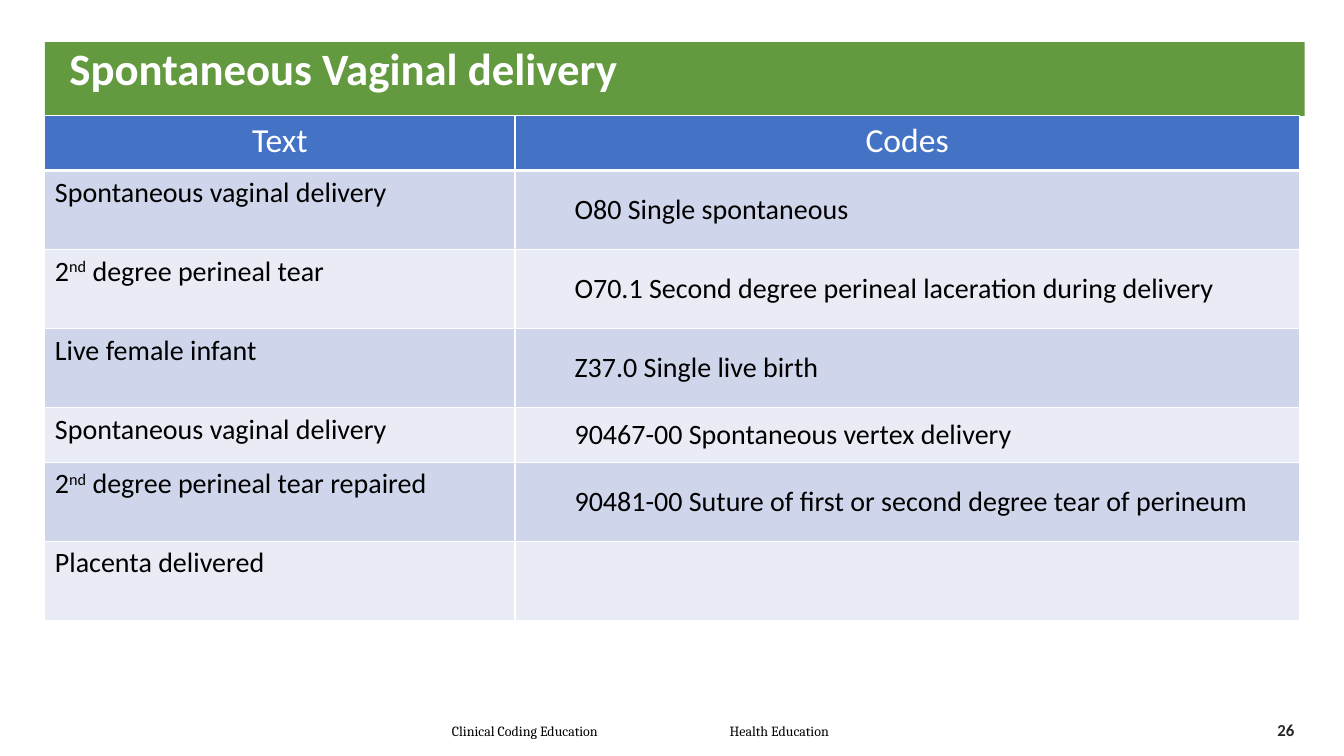
from lxml.etree import SubElement
from pptx import Presentation
from pptx.dml.color import RGBColor
from pptx.enum.shapes import MSO_SHAPE
from pptx.enum.text import MSO_ANCHOR, PP_ALIGN
from pptx.oxml.ns import qn
from pptx.util import Cm, Pt


def rgb(value):
    return RGBColor.from_string(value)


class SlideBuilder:
    """Holds the style and the current slide, and adds each kind of element."""

    font = "Calibri"
    white, black, gray = "FFFFFF", "000000", "262626"
    green, blue = "63993F", "4472C4"
    bands = ("CFD5EA", "E9EBF5")

    def __init__(self, prs):
        self.s = prs.slides.add_slide(prs.slide_layouts[6])

    def style(self, r, size, color, bold=False, font=None):
        r.font.name = font or self.font
        r.font.size = Pt(size)
        r.font.bold = bold
        r.font.color.rgb = rgb(color)

    def banner(self, text, x, y, w, h):
        sp = self.s.shapes.add_shape(MSO_SHAPE.RECTANGLE, Cm(x), Cm(y), Cm(w), Cm(h))
        sp.shadow.inherit = False
        sp.fill.solid()
        sp.fill.fore_color.rgb = rgb(self.green)
        sp.line.fill.background()
        tf = sp.text_frame
        tf.text = text
        tf.margin_left = Cm(0.62)
        tf.vertical_anchor = MSO_ANCHOR.TOP
        p = tf.paragraphs[0]
        p.alignment = PP_ALIGN.LEFT
        p.line_spacing = 0.9
        self.style(p.runs[0], 32, self.white, bold=True)

    def label(self, text, x, y, w, h, size, color, bold=False, font=None,
              align=PP_ALIGN.LEFT, inset=0.25, tab=None):
        tf = self.s.shapes.add_textbox(Cm(x), Cm(y), Cm(w), Cm(h)).text_frame
        tf.word_wrap = True
        tf.vertical_anchor = MSO_ANCHOR.MIDDLE
        tf.margin_left = Cm(inset)
        tf.text = text
        p = tf.paragraphs[0]
        p.alignment = align
        if tab:
            tabs = SubElement(p._p.get_or_add_pPr(), qn("a:tabLst"))
            SubElement(tabs, qn("a:tab"), pos=str(Cm(tab)), algn="l")
        self.style(p.runs[0], size, color, bold, font)

    def borders(self, cell, bottom):
        tcPr = cell._tc.get_or_add_tcPr()
        for side, width in (("L", 1), ("R", 1), ("T", 1), ("B", bottom)):
            ln = SubElement(tcPr, qn(f"a:ln{side}"), w=str(Pt(width)))
            fill = SubElement(ln, qn("a:solidFill"))
            SubElement(fill, qn("a:srgbClr"), val=self.white)

    def cell(self, cell, text, fill, size, color, bottom=1):
        self.borders(cell, bottom)
        cell.fill.solid()
        cell.fill.fore_color.rgb = rgb(fill)
        p = cell.text_frame.paragraphs[0]
        for i, part in enumerate(text.split("^")):
            if part:
                r = p.add_run()
                r.text = part
                self.style(r, size, color)
                if i % 2:
                    r.font._element.set("baseline", "30000")
        return p

    def table(self, header, rows, x, y, widths, heights):
        frame = self.s.shapes.add_table(len(rows) + 1, len(widths), Cm(x), Cm(y),
                                        Cm(sum(widths)), Cm(sum(heights)))
        table = frame.table
        for col, width in zip(table.columns, widths):
            col.width = Cm(width)
        for row, height in zip(table.rows, heights):
            row.height = Cm(height)
        for j, text in enumerate(header):
            p = self.cell(table.cell(0, j), text, self.blue, 24, self.white, bottom=3)
            p.alignment = PP_ALIGN.CENTER
        for i, row in enumerate(rows):
            for j, text in enumerate(row):
                self.cell(table.cell(i + 1, j), text, self.bands[i % 2], 20, self.black)
            code = table.cell(i + 1, 1)
            code.margin_left = Cm(1.5)
            code.vertical_anchor = MSO_ANCHOR.MIDDLE


def main():
    prs = Presentation()
    prs.slide_width, prs.slide_height = Cm(33.87), Cm(19.05)
    b = SlideBuilder(prs)
    b.label("Clinical Coding Education\tHealth Education", 10.54, 18.01, 12.07, 0.84,
            10, b.black, font="Cambria", inset=0.85, tab=7)
    b.banner("Spontaneous Vaginal delivery", 1.13, 1.06, 31.75, 1.86)
    b.label("26", 29.21, 17.98, 3.66, 0.84, 12, b.gray, bold=True, align=PP_ALIGN.RIGHT)
    short, tall = 1.38, 1.99
    rows = [
        ("Spontaneous vaginal delivery", "O80 Single spontaneous"),
        ("2^nd^ degree perineal tear", "O70.1 Second degree perineal laceration during delivery"),
        ("Live female infant", "Z37.0 Single live birth"),
        ("Spontaneous vaginal delivery", "90467-00 Spontaneous vertex delivery"),
        ("2^nd^ degree perineal tear repaired",
         "90481-00 Suture of first or second degree tear of perineum"),
        ("Placenta delivered", ""),
    ]
    b.table(("Text", "Codes"), rows, 1.13, 2.92, (11.85, 19.76),
            (short, tall, tall, tall, short, tall, tall))
    prs.save("out.pptx")


if __name__ == "__main__":
    main()
